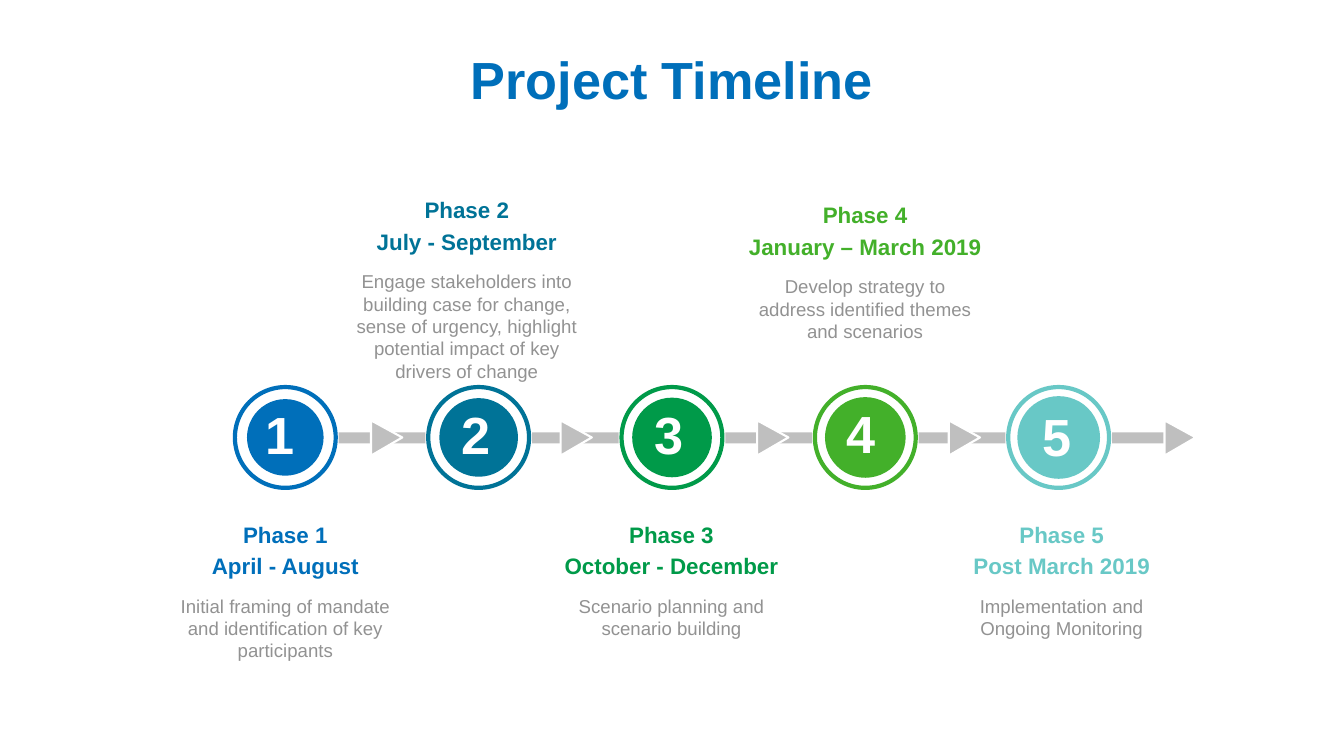
from pptx import Presentation
from pptx.dml.color import RGBColor
from pptx.enum import shapes as kinds, text as t
from pptx.util import Inches, Pt

COLORS = {
    "phase 1": "006FBA", "phase 2": "007397", "phase 3": "009A49",
    "phase 4": "43B02A", "phase 5": "68C8C6",
    "arrow": "BFBFBF", "body": "929292", "white": "FFFFFF",
}
STEP = 1.9175      # distance between neighbouring phases
AXIS = 4.34        # height of the timeline

# dates, description, dot size, digit left and top,
# heading centre and top, description width, arrow left
PHASES = [
    ("April - August",
     "Initial framing of mandate and identification of key participants",
     0.76, 2.54, 3.94, 2.83, 5.12, 2.35, 3.68),
    ("July - September",
     "Engage stakeholders into building case for change, sense of urgency, "
     "highlight potential impact of key drivers of change",
     0.78, 4.48, 3.94, 4.63, 1.9, 2.35, 5.56),
    ("October - December", "Scenario planning and scenario building",
     0.79, 6.39, 3.94, 6.66, 5.12, 2.35, 7.51),
    ("January – March 2019",
     "Develop strategy to address identified themes and scenarios",
     0.8, 8.3, 3.93, 8.58, 1.95, 2.15, 9.41),
    ("Post March 2019", "Implementation and Ongoing Monitoring",
     0.82, 10.24, 3.96, 10.53, 5.12, 2.35, 11.55),
]

presentation = Presentation()
presentation.slide_width, presentation.slide_height = Inches(13.33), Inches(7.5)
slide = presentation.slides.add_slide(presentation.slide_layouts[5])


def write(shape, lines, size, color, bold=True, align=t.PP_ALIGN.CENTER, inset=None,
          wrap=True, anchor=t.MSO_ANCHOR.TOP):
    frame = shape.text_frame
    frame.text = "\n".join(lines)
    frame.word_wrap = wrap
    frame.auto_size = t.MSO_AUTO_SIZE.NONE
    frame.vertical_anchor = anchor
    if inset is not None:
        frame.margin_left = frame.margin_right = Inches(inset)
        frame.margin_top = frame.margin_bottom = Inches(inset)
    for number, paragraph in enumerate(frame.paragraphs):
        paragraph.alignment = align
        paragraph.space_before = Pt(0.2 * size if number else 0)
        for run in paragraph.runs:
            run.font.name = "Arial"
            run.font.size = Pt(size)
            run.font.bold = bold
            run.font.color.rgb = RGBColor.from_string(COLORS[color])


def paint(shape, fill=None, line=None, width=0):
    shape.shadow.inherit = False
    for part, color in ((shape.fill, fill), (shape.line.fill, line)):
        if color:
            part.solid()
            part.fore_color.rgb = RGBColor.from_string(COLORS[color])
        else:
            part.background()
    if line:
        shape.line.width = Pt(width)


# Title
title = slide.shapes.title
title.left, title.top = Inches(1.11), Inches(0.47)
title.width, title.height = Inches(11.11), Inches(0.61)
write(title, ["Project Timeline"], 37.3, "phase 1", inset=0, wrap=False,
      anchor=t.MSO_ANCHOR.MIDDLE)

# Bars between the circles
for index in range(len(PHASES)):
    bar_width = 0.67 if index == len(PHASES) - 1 else 0.86
    bar = slide.shapes.add_shape(
        kinds.MSO_SHAPE.RECTANGLE, Inches(3.36 + index * STEP),
        Inches(AXIS - 0.05), Inches(bar_width), Inches(0.11))
    paint(bar, fill="arrow")

for index, (dates, description, dot_size, digit_left, digit_top,
            center, top, width, arrow_left) in enumerate(PHASES):
    color = f"phase {index + 1}"

    # Dot and ring
    middle = 2.83 + index * STEP
    for size, style in ((dot_size, {"fill": color}),
                        (1, {"line": color, "width": 3})):
        circle = slide.shapes.add_shape(
            kinds.MSO_SHAPE.OVAL, Inches(middle - size / 2),
            Inches(AXIS - size / 2), Inches(size), Inches(size))
        paint(circle, **style)

    # Number
    digit = slide.shapes.add_textbox(
        Inches(digit_left), Inches(digit_top), Inches(0.53), Inches(0.73))
    write(digit, [str(index + 1)], 37.3, "white", align=t.PP_ALIGN.LEFT)

    # Heading and description
    heading = slide.shapes.add_textbox(
        Inches(center - 1.27), Inches(top), Inches(2.54), Inches(0.69))
    write(heading, [f"Phase {index + 1}", dates], 16, color, wrap=False)
    body = slide.shapes.add_textbox(
        Inches(center - width / 2), Inches(top + 0.78), Inches(width), Inches(0.67))
    write(body, [description], 13.3, "body", bold=False, inset=0)

    # Arrowhead
    builder = slide.shapes.build_freeform(
        Inches(arrow_left), Inches(AXIS - 0.17))
    builder.add_line_segments(
        [(Inches(arrow_left + 0.31), Inches(AXIS)),
         (Inches(arrow_left), Inches(AXIS + 0.18))], close=True)
    paint(builder.convert_to_shape(), fill="arrow", line="white", width=1.5)

presentation.save("out.pptx")
